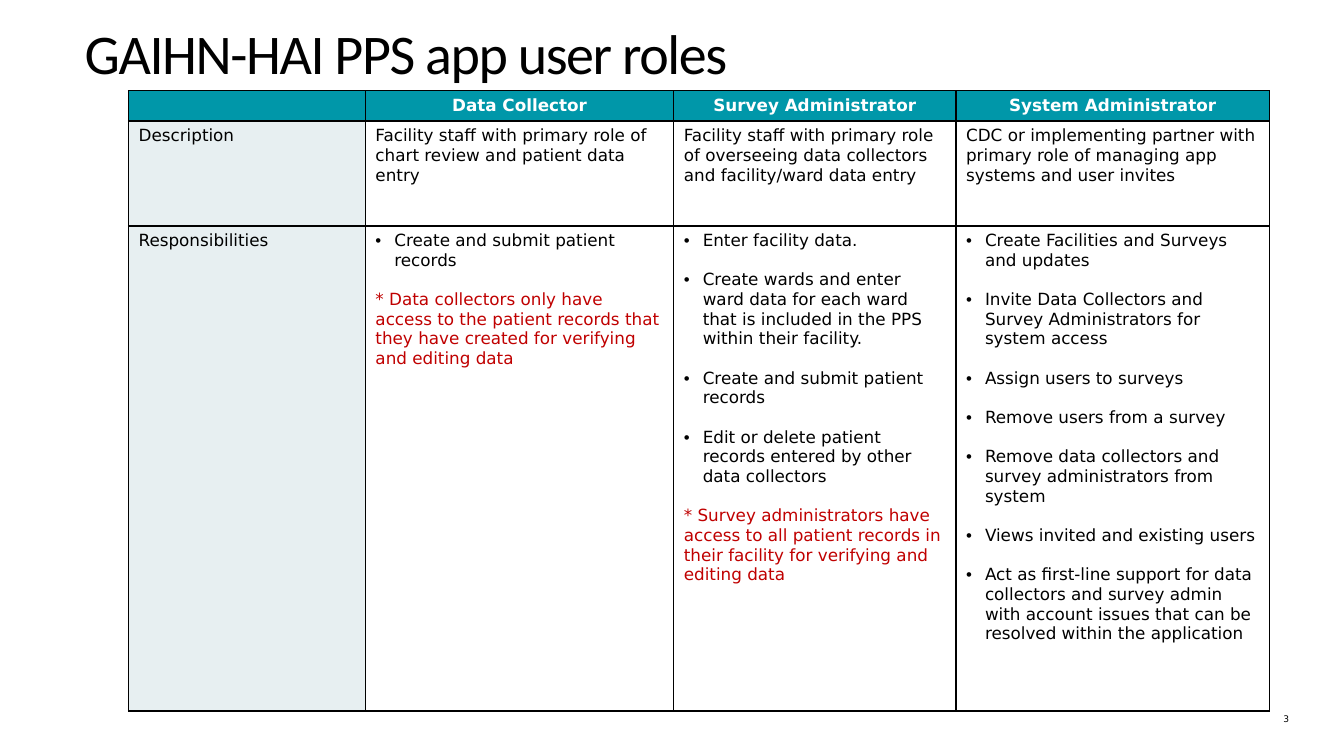
import pptx
import pptx.dml.color
import pptx.enum.text
import pptx.oxml
import pptx.oxml.ns
import pptx.util
from lxml import etree

Pt = pptx.util.Pt
RGB = pptx.dml.color.RGBColor
ALIGN = pptx.enum.text.PP_ALIGN
ANCHOR = pptx.enum.text.MSO_ANCHOR
FIT = pptx.enum.text.MSO_AUTO_SIZE
qn = pptx.oxml.ns.qn

BLACK = RGB(0x00, 0x00, 0x00)
WHITE = RGB(0xFF, 0xFF, 0xFF)
TEAL = RGB(0x00, 0x97, 0xA9)
PALE = RGB(0xE7, 0xEF, 0xF1)
RED = RGB(0xC0, 0x00, 0x00)

BODY = "DejaVu Sans"
GAP = 14
INDENT = Pt(13.5)

COLS = [169.2, 220.3, 201.6, 223.9]
ROWS = [21.5, 75, 346.5]
HEADS = ["", "Data Collector", "Survey Administrator", "System Administrator"]
ABOUT = [
    "Description",
    "Facility staff with primary role of chart review and patient data entry",
    "Facility staff with primary role of overseeing data collectors and "
    "facility/ward data entry",
    "CDC or implementing partner with primary role of managing app systems "
    "and user invites",
]
# One (bullets, note) pair for each role
DUTIES = [
    (["Create and submit patient records"],
     "* Data collectors only have access to the patient records that they "
     "have created for verifying and editing data"),
    (["Enter facility data.",
      "Create wards and enter ward data for each ward that is included in "
      "the PPS within their facility.",
      "Create and submit patient records",
      "Edit or delete patient records entered by other data collectors"],
     "* Survey administrators have access to all patient records in their "
     "facility for verifying and editing data"),
    (["Create Facilities and Surveys and updates",
      "Invite Data Collectors and Survey Administrators for system access",
      "Assign users to surveys",
      "Remove users from a survey",
      "Remove data collectors and survey administrators from system",
      "Views invited and existing users",
      "Act as first-line support for data collectors and survey admin with "
      "account issues that can be resolved within the application"],
     ""),
]


def add_bullet(para):
    props = para._p.get_or_add_pPr()
    props.set("marL", str(INDENT))
    props.set("indent", str(-INDENT))
    font = etree.SubElement(props, qn("a:buFont"))
    font.set("typeface", "Arial")
    etree.SubElement(props, qn("a:buChar")).set("char", "•")


def write(frame, text, size=12, font=BODY, color=BLACK, bold=False,
          align=ALIGN.LEFT, bullet=False, gap=GAP):
    """Fill the first paragraph, or add one set off by a gap."""
    para = frame.paragraphs[0]
    if para.runs:
        para = frame.add_paragraph()
        para.space_before = Pt(gap)
    para.alignment = align
    if bullet:
        add_bullet(para)
    if not text:
        end = etree.SubElement(para._p, qn("a:endParaRPr"))
        end.set("sz", str(size * 100))
        etree.SubElement(end, qn("a:latin")).set("typeface", font)
        return None
    run = para.add_run()
    run.text = text
    run.font.size = Pt(size)
    run.font.name = font
    run.font.bold = bold
    run.font.color.rgb = color
    return run


def clear_insets(frame):
    frame.margin_left = frame.margin_right = 0
    frame.margin_top = frame.margin_bottom = 0
    frame.word_wrap = True


def add_title(slide, text):
    title = slide.shapes.title
    title.left, title.top = Pt(60.5), Pt(9.4)
    title.width, title.height = Pt(871), Pt(55.4)
    frame = title.text_frame
    clear_insets(frame)
    frame.auto_size = FIT.NONE
    frame.vertical_anchor = ANCHOR.MIDDLE
    run = write(frame, text, size=40, font="Calibri")
    run.font._element.set("spc", "-100")


def add_number(slide, text):
    box = slide.shapes.add_textbox(Pt(896.4), Pt(509.8), Pt(24.5), Pt(8))
    clear_insets(box.text_frame)
    write(box.text_frame, text, size=6.5, align=ALIGN.RIGHT)


def paint(cell, color):
    """Draw the four borders, then the fill."""
    props = cell._tc.get_or_add_tcPr()
    for side in ("lnL", "lnR", "lnT", "lnB"):
        line = etree.SubElement(props, qn("a:" + side))
        line.set("w", str(Pt(1)))
        fill = etree.SubElement(line, qn("a:solidFill"))
        etree.SubElement(fill, qn("a:srgbClr")).set("val", str(BLACK))
    cell.fill.solid()
    cell.fill.fore_color.rgb = color


def add_roles(slide):
    shape = slide.shapes.add_table(len(ROWS), len(COLS), Pt(91.8), Pt(64.8),
                                   Pt(sum(COLS)), Pt(sum(ROWS)))
    table = shape.table
    for col, width in zip(table.columns, COLS):
        col.width = Pt(width)
    for row, height in zip(table.rows, ROWS):
        row.height = Pt(height)
    for c, (head, about) in enumerate(zip(HEADS, ABOUT)):
        top, mid, low = (table.cell(r, c) for r in range(len(ROWS)))
        side = WHITE if c else PALE
        for cell, color in ((top, TEAL), (mid, side), (low, side)):
            paint(cell, color)
        write(top.text_frame, head, color=WHITE, bold=True,
              align=ALIGN.CENTER)
        write(mid.text_frame, about)
        if c == 0:
            write(low.text_frame, "Responsibilities")
            continue
        duties, note = DUTIES[c - 1]
        for duty in duties:
            write(low.text_frame, duty, bullet=True)
        if note:
            write(low.text_frame, note, color=RED)


def main():
    deck = pptx.Presentation()
    deck.slide_width, deck.slide_height = Pt(960), Pt(540)
    slide = deck.slides.add_slide(deck.slide_layouts[5])
    add_number(slide, "3")
    add_title(slide, "GAIHN-HAI PPS app user roles")
    add_roles(slide)
    deck.save("out.pptx")


if __name__ == "__main__":
    main()
